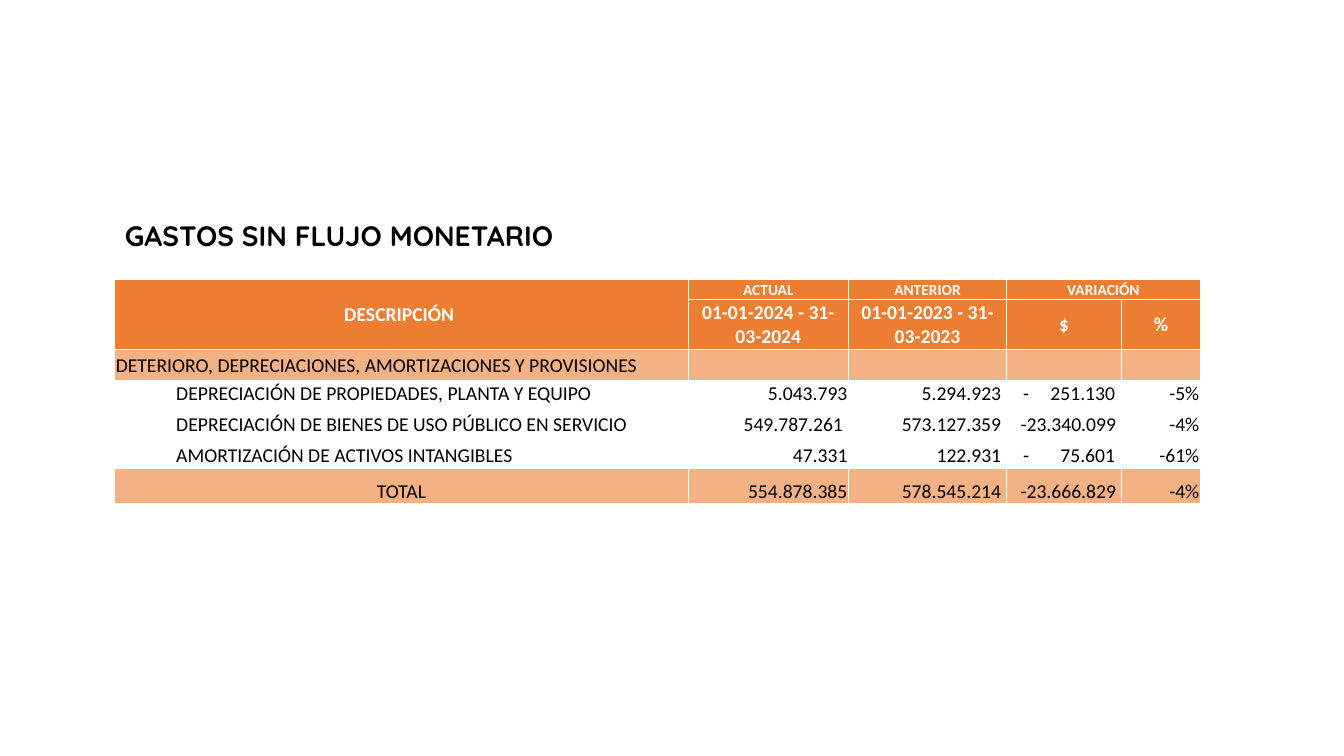
from lxml import etree
from pptx import Presentation
from pptx.dml.color import RGBColor
from pptx.enum.text import MSO_ANCHOR, PP_ALIGN
from pptx.oxml.ns import qn
from pptx.util import Pt

LEFT, CENTER, RIGHT = PP_ALIGN.LEFT, PP_ALIGN.CENTER, PP_ALIGN.RIGHT
MIDDLE, BOTTOM = MSO_ANCHOR.MIDDLE, MSO_ANCHOR.BOTTOM
TITLE_ONLY = 5
ORANGE, PEACH, WHITE, BLACK = "ED7D31", "F4B183", "FFFFFF", "000000"
MINUS_INSET, AMOUNT_TAB = 11.8, 65.7

COLUMN_WIDTHS = [43.2, 366.4, 114.5, 113, 82.1, 56.2]
ROW_HEIGHTS = [14.4, 35.2, 22.8, 18, 25.2, 19.4, 25.2]
HEADER_ROWS = 2
GROUP_ROW, TOTAL_ROW = 2, 6
MERGES = [((0, 0), (1, 1)), ((0, 4), (0, 5)), ((2, 0), (2, 1)), ((6, 0), (6, 1))]
ROWS = [
    ["DESCRIPCIÓN ", "", "ACTUAL", "ANTERIOR", "VARIACIÓN", ""],
    ["", "", "01-01-2024 - 31-03-2024", "01-01-2023 - 31-03-2023", "$", "%"],
    ["DETERIORO, DEPRECIACIONES, AMORTIZACIONES Y PROVISIONES", "", "", "", "", ""],
    ["", "DEPRECIACIÓN DE PROPIEDADES, PLANTA Y EQUIPO",
     "5.043.793", "5.294.923 ", "-\t251.130", "-5%"],
    ["", "DEPRECIACIÓN DE BIENES DE USO PÚBLICO EN SERVICIO",
     "549.787.261 ", "573.127.359 ", "-23.340.099 ", "-4%"],
    ["", "AMORTIZACIÓN DE ACTIVOS INTANGIBLES",
     "47.331", "122.931 ", "-\t75.601", "-61%"],
    ["TOTAL", "", "554.878.385", "578.545.214 ", "-23.666.829 ", "-4%"],
]


def color(hex_string):
    return RGBColor.from_string(hex_string)


def add_span(para, text, font, size, hex_color, bold=False):
    span = para.add_run()
    span.text = text
    span.font.name = font
    span.font.size = Pt(size)
    span.font.bold = bold
    span.font.color.rgb = color(hex_color)


def add_title(page, text):
    title = page.shapes.title
    title.left, title.top, title.width, title.height = Pt(82), Pt(117.4), Pt(828), Pt(104.4)
    title.text_frame.vertical_anchor = MIDDLE
    para = title.text_frame.paragraphs[0]
    para.alignment = LEFT
    para.line_spacing = 0.9
    add_span(para, text, "Quicksand", 20, BLACK, bold=True)


def add_borders(cell, hex_color, width):
    properties = cell._tc.get_or_add_tcPr()
    for position, side in enumerate(("lnL", "lnR", "lnT", "lnB")):
        line = etree.Element(qn(f"a:{side}"), w=str(Pt(width)))
        fill = etree.SubElement(line, qn("a:solidFill"))
        etree.SubElement(fill, qn("a:srgbClr"), val=hex_color)
        properties.insert(position, line)


def add_right_tab(para, position):
    tabs = etree.SubElement(para._p.get_or_add_pPr(), qn("a:tabLst"))
    etree.SubElement(tabs, qn("a:tab"), pos=str(Pt(position)), algn="r")


def format_cell(cell, fill):
    cell.margin_left = cell.margin_right = cell.margin_top = Pt(0.7)
    cell.margin_bottom = Pt(0)
    if fill:
        cell.fill.solid()
        cell.fill.fore_color.rgb = color(fill)
    else:
        cell.fill.background()
    add_borders(cell, WHITE, 1)


def write_cell(cell, text, row, column):
    header = row < HEADER_ROWS
    size = 11 if row == 0 and column > 1 else 14
    para = cell.text_frame.paragraphs[0]
    cell.vertical_anchor = BOTTOM if row == TOTAL_ROW else MIDDLE
    if not text:
        etree.SubElement(para._p, qn("a:endParaRPr"), sz=str(size * 100))
        return
    if "\t" in text:
        cell.margin_left = Pt(MINUS_INSET)
        add_right_tab(para, AMOUNT_TAB)
        para.alignment = LEFT
    elif header or (row == TOTAL_ROW and column == 0):
        para.alignment = CENTER
    else:
        para.alignment = LEFT if column < 2 else RIGHT
    add_span(para, text, "Calibri", size, WHITE if header else BLACK, bold=header)


def add_expense_table(page):
    frame = page.shapes.add_table(
        len(ROWS), len(COLUMN_WIDTHS), Pt(82), Pt(199.8),
        Pt(sum(COLUMN_WIDTHS)), Pt(sum(ROW_HEIGHTS)))
    table = frame.table
    table.first_row = table.horz_banding = False
    for column, width in zip(table.columns, COLUMN_WIDTHS):
        column.width = Pt(width)
    for row, height in zip(table.rows, ROW_HEIGHTS):
        row.height = Pt(height)
    row_fills = dict.fromkeys(range(HEADER_ROWS), ORANGE)
    row_fills.update({GROUP_ROW: PEACH, TOTAL_ROW: PEACH})
    for row, texts in enumerate(ROWS):
        for column, text in enumerate(texts):
            cell = table.cell(row, column)
            format_cell(cell, row_fills.get(row))
            write_cell(cell, text, row, column)
    for first, last in MERGES:
        table.cell(*first).merge(table.cell(*last))


def main():
    deck = Presentation()
    deck.slide_width, deck.slide_height = Pt(960), Pt(540)
    page = deck.slides.add_slide(deck.slide_layouts[TITLE_ONLY])
    add_title(page, "GASTOS SIN FLUJO MONETARIO")
    add_expense_table(page)
    deck.save("out.pptx")


if __name__ == "__main__":
    main()
